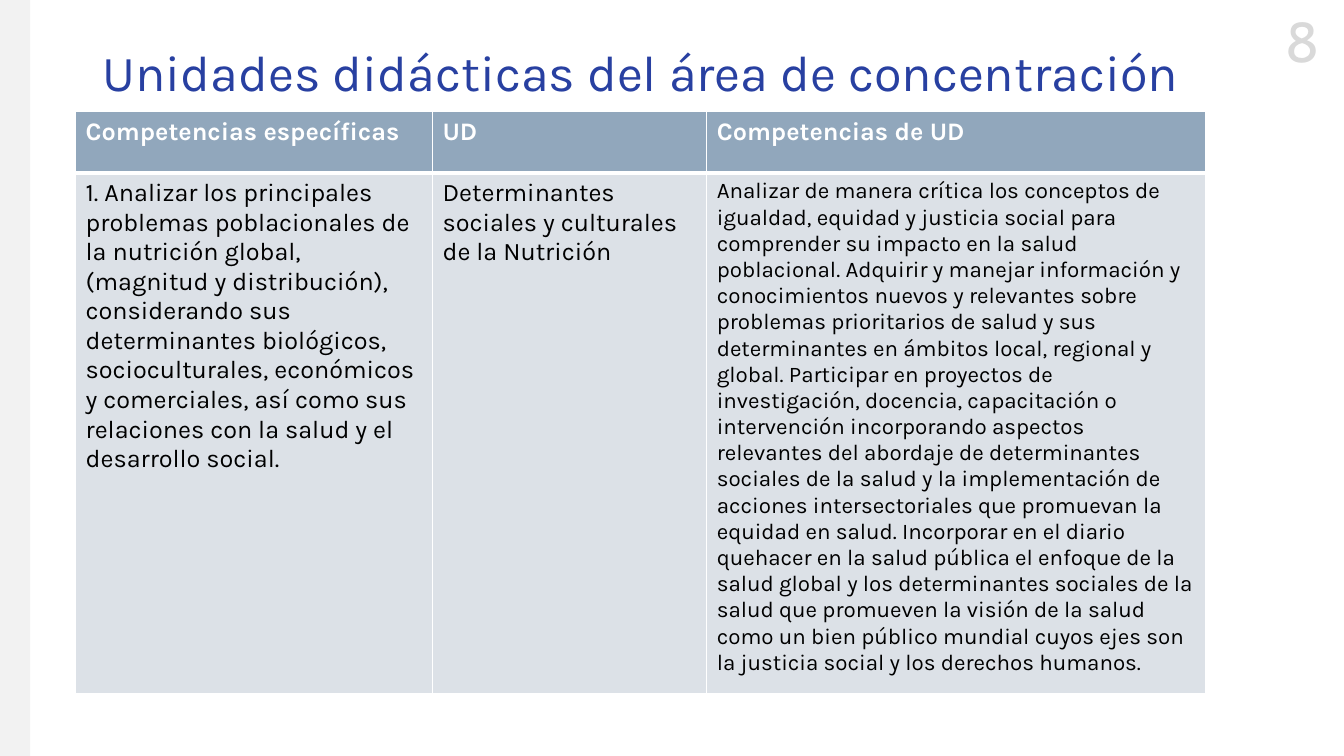
from lxml import etree
from pptx import Presentation
from pptx.dml.color import RGBColor
from pptx.enum import shapes, text
from pptx.oxml.ns import qn
from pptx.util import Inches, Pt

TITLE = "Unidades didácticas del área de concentración"
PAGE_NUMBER = "8"
ROWS = [
    ("Competencias específicas", "UD", "Competencias de UD"),
    (
        "1. Analizar los principales problemas poblacionales de la nutrición global, "
        "(magnitud y distribución), considerando sus determinantes biológicos, "
        "socioculturales, económicos y comerciales, así como sus relaciones con la "
        "salud y el desarrollo social.",
        "Determinantes sociales y culturales de la Nutrición",
        "Analizar de manera crítica los conceptos de igualdad, equidad y justicia social "
        "para comprender su impacto en la salud poblacional. Adquirir y manejar "
        "información y conocimientos nuevos y relevantes sobre problemas prioritarios de "
        "salud y sus determinantes en ámbitos local, regional y global. Participar en "
        "proyectos de investigación, docencia, capacitación o intervención incorporando "
        "aspectos relevantes del abordaje de determinantes sociales de la salud y la "
        "implementación de acciones intersectoriales que promuevan la equidad en salud. "
        "Incorporar en el diario quehacer en la salud pública el enfoque de la salud "
        "global y los determinantes sociales de la salud que promueven la visión de la "
        "salud como un bien público mundial cuyos ejes son la justicia social y los "
        "derechos humanos.",
    ),
]
COLUMN_WIDTHS = (3.54, 2.72, 4.95)
ROW_HEIGHTS = (0.61, 5.15)

THEME = {
    "font": "Karla", "number_font": "Cabin",
    "title": "2840A1", "number": "D9D9D9", "strip": "F2F2F2",
    "header": "91A7BC", "body": "DCE1E7",
    "header_text": "FFFFFF", "body_text": "000000", "border": "FFFFFF",
    "title_size": 36, "number_size": 40, "cell_size": 18, "long_size": 16,
    "thin": 1, "thick": 3,
}


def style(para, font, size, color, bold=False):
    for span in para.runs:
        span.font.name = font
        span.font.size = Pt(size)
        span.font.bold = bold
        span.font.color.rgb = RGBColor.from_string(color)


def add_text(page, area, words, font, size, color):
    box = page.shapes.add_textbox(*map(Inches, area))
    box.text_frame.text = words
    style(box.text_frame.paragraphs[0], font, size, color)
    return box.text_frame


def set_borders(cell, widths):
    """Put left, right, top and bottom lines ahead of the cell's fill."""
    properties = cell._tc.get_or_add_tcPr()
    for index, (side, width) in enumerate(zip("LRTB", widths)):
        line = etree.Element(qn(f"a:ln{side}"), w=str(Pt(width)))
        fill = etree.SubElement(line, qn("a:solidFill"))
        etree.SubElement(fill, qn("a:srgbClr"), val=THEME["border"])
        properties.insert(index, line)


def add_competence_table(page):
    frame = page.shapes.add_table(
        len(ROWS), len(COLUMN_WIDTHS), Inches(0.75), Inches(1.11),
        Inches(sum(COLUMN_WIDTHS)), Inches(sum(ROW_HEIGHTS)))
    table = frame.table
    for column, width in zip(table.columns, COLUMN_WIDTHS):
        column.width = Inches(width)
    for row, height in zip(table.rows, ROW_HEIGHTS):
        row.height = Inches(height)

    thin, thick = THEME["thin"], THEME["thick"]
    for r, row in enumerate(ROWS):
        part = "body" if r else "header"
        edges = (thin, thin, thick, thin) if r else (thin, thin, thin, thick)
        for c, words in enumerate(row):
            cell = table.cell(r, c)
            cell.text = words
            is_long = r > 0 and c == len(row) - 1
            size = THEME["long_size" if is_long else "cell_size"]
            style(cell.text_frame.paragraphs[0], THEME["font"], size,
                  THEME[f"{part}_text"], bold=r == 0)
            cell.fill.solid()
            cell.fill.fore_color.rgb = RGBColor.from_string(THEME[part])
            set_borders(cell, edges)


def main():
    deck = Presentation()
    deck.slide_width, deck.slide_height = Inches(13.33), Inches(7.5)
    page = deck.slides.add_slide(deck.slide_layouts[6])

    number = add_text(page, (12.54, 0.02, 0.75, 0.77), PAGE_NUMBER,
                      THEME["number_font"], THEME["number_size"], THEME["number"])
    number.word_wrap = False
    number.paragraphs[0].alignment = text.PP_ALIGN.CENTER

    strip = page.shapes.add_shape(
        shapes.MSO_SHAPE.RECTANGLE, 0, 0, Inches(0.3), deck.slide_height)
    strip.shadow.inherit = False
    strip.fill.solid()
    strip.fill.fore_color.rgb = RGBColor.from_string(THEME["strip"])
    strip.line.fill.background()

    title = add_text(page, (0.92, 0.4, 11.5, 0.69), TITLE,
                     THEME["font"], THEME["title_size"], THEME["title"])
    title.word_wrap = True
    title.vertical_anchor = text.MSO_ANCHOR.MIDDLE
    title.paragraphs[0].line_spacing = 0.9

    add_competence_table(page)
    deck.save("out.pptx")


if __name__ == "__main__":
    main()
